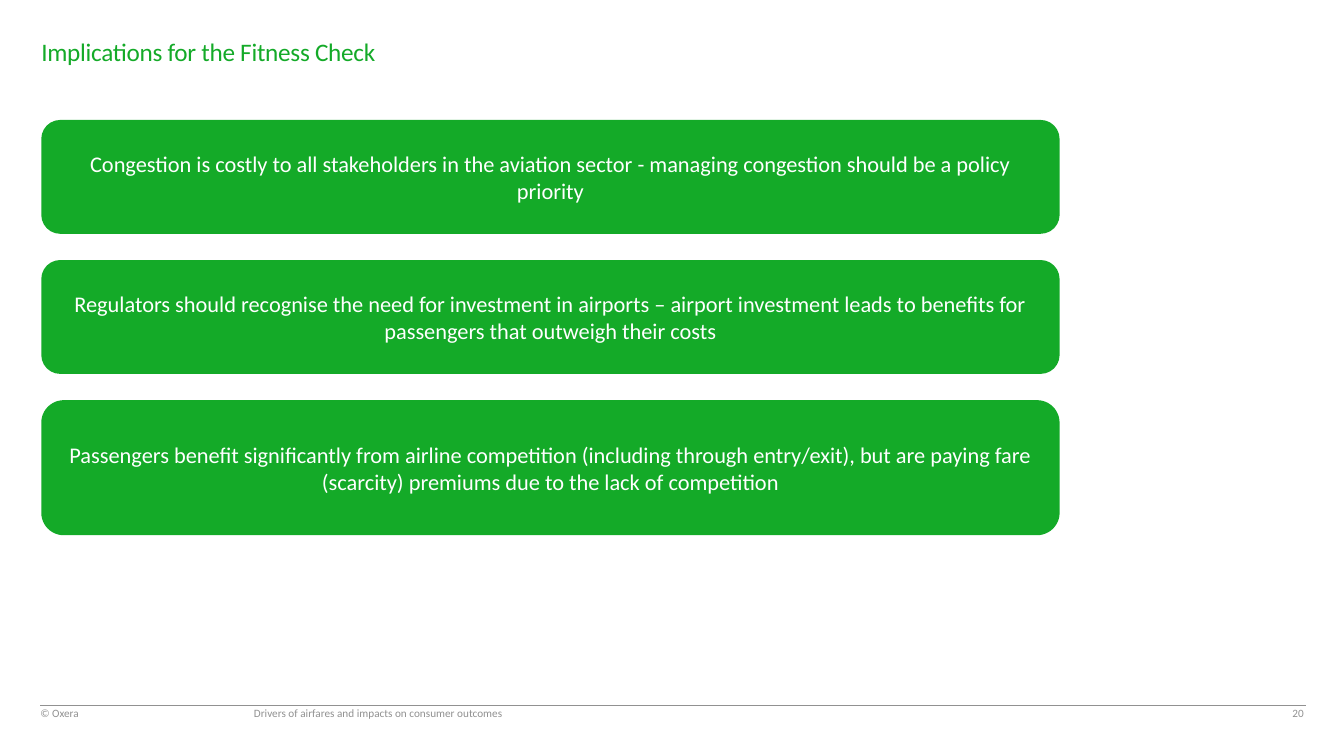
"""Build the slide on implications for the Fitness Check."""
from dataclasses import dataclass

from lxml import etree
from pptx import Presentation
from pptx.dml.color import RGBColor
from pptx.enum.shapes import MSO_CONNECTOR, MSO_SHAPE
from pptx.enum.text import MSO_ANCHOR, PP_ALIGN
from pptx.oxml.ns import qn
from pptx.util import Inches, Pt

ROUND, LINE = MSO_SHAPE.ROUNDED_RECTANGLE, MSO_CONNECTOR.STRAIGHT
TOP, MIDDLE, BOTTOM = MSO_ANCHOR.TOP, MSO_ANCHOR.MIDDLE, MSO_ANCHOR.BOTTOM
LEFT, CENTER, RIGHT = PP_ALIGN.LEFT, PP_ALIGN.CENTER, PP_ALIGN.RIGHT


@dataclass(frozen=True)
class Theme:
    font: str = "Calibri"
    green: str = "14AA28"
    gray: str = "919191"
    white: str = "FFFFFF"
    title: int = 18
    body: int = 16
    foot: int = 8


THEME = Theme()
TITLE = "Implications for the Fitness Check"
POINTS = [
    ("Congestion is costly to all stakeholders in the aviation sector - "
     "managing congestion should be a policy priority", 1.13),
    ("Regulators should recognise the need for investment in airports – "
     "airport investment leads to benefits for passengers that outweigh their costs", 1.13),
    ("Passengers benefit significantly from airline competition (including through "
     "entry/exit), but are paying fare (scarcity) premiums due to the lack of competition", 1.34),
]
FOOTER = [
    ("© Oxera", (0.4, 6.9, 0.7, 0.29), 0, LEFT),
    ("Drivers of airfares and impacts on consumer outcomes", (2.42, 6.96, 5.14, 0.23), 0.1, LEFT),
    ("20", (10.03, 6.9, 3, 0.29), 0.1, RIGHT),
]
EDGE, FIRST, WIDTH, GAP = 0.41, 1.19, 10.1, 0.26


def write(shape, text, size, color, anchor, align, lead=None):
    frame = shape.text_frame
    frame.word_wrap = True
    frame.vertical_anchor = anchor
    para = frame.paragraphs[0]
    para.text = text
    para.alignment = align
    if lead:
        para.line_spacing = Pt(lead)
    para.font.name = THEME.font
    para.font.size = Pt(size)
    para.font.color.rgb = RGBColor.from_string(color)
    return frame


def add_title(slide):
    box = slide.shapes.add_textbox(*map(Inches, (EDGE, 0.28, 9.35, 0.36)))
    frame = write(box, TITLE, THEME.title, THEME.green, TOP, LEFT, 24)
    frame.margin_left = frame.margin_bottom = 0
    frame.paragraphs[0].runs[0].font._element.set("spc", "-20")


def add_points(slide):
    top = FIRST
    for text, height in POINTS:
        card = slide.shapes.add_shape(ROUND, *map(Inches, (EDGE, top, WIDTH, height)))
        card.shadow.inherit = False
        card.fill.solid()
        card.fill.fore_color.rgb = RGBColor.from_string(THEME.green)
        card.line.fill.background()
        write(card, text, THEME.body, THEME.white, MIDDLE, CENTER)
        top += height + GAP


def add_footer(slide):
    rule = slide.shapes.add_connector(LINE, *map(Inches, (0.4, 7, 12.95, 7)))
    rule.line.color.rgb = RGBColor.from_string(THEME.gray)
    rule.line.width = Pt(0.5)
    etree.SubElement(rule._element.spPr, qn("a:effectLst"))
    for text, area, inset, align in FOOTER:
        box = slide.shapes.add_textbox(*map(Inches, area))
        frame = write(box, text, THEME.foot, THEME.gray, BOTTOM, align, 10)
        frame.margin_left = Inches(inset)


def main():
    deck = Presentation()
    deck.slide_width, deck.slide_height = Inches(13.33), Inches(7.5)
    slide = deck.slides.add_slide(deck.slide_layouts[6])
    add_title(slide)
    add_points(slide)
    add_footer(slide)
    deck.save("out.pptx")


if __name__ == "__main__":
    main()
